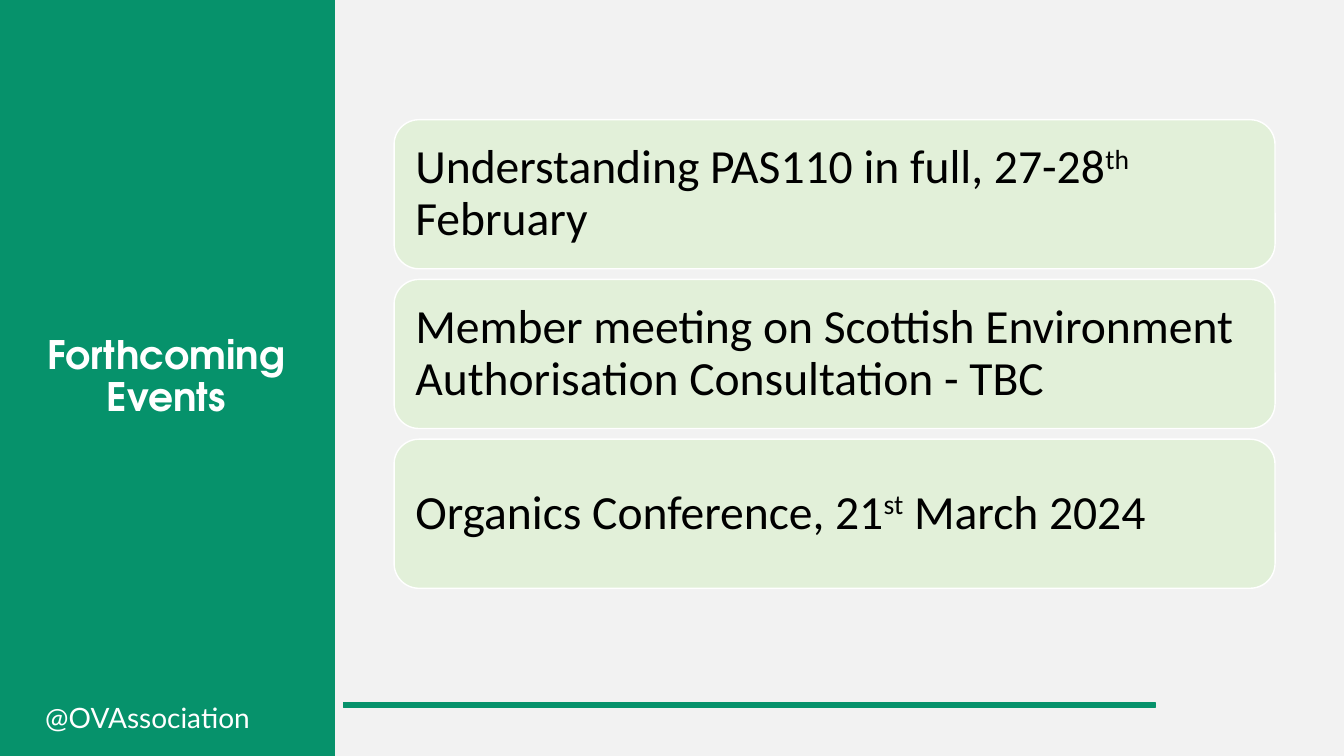
from dataclasses import dataclass

from pptx import Presentation
from pptx.dml.color import RGBColor
from pptx.enum.shapes import MSO_SHAPE
from pptx.enum.text import MSO_ANCHOR, PP_ALIGN
from pptx.util import Pt

RECTANGLE, ROUNDED = MSO_SHAPE.RECTANGLE, MSO_SHAPE.ROUNDED_RECTANGLE
MIDDLE = MSO_ANCHOR.MIDDLE
LEFT, CENTER = PP_ALIGN.LEFT, PP_ALIGN.CENTER


@dataclass(frozen=True)
class Theme:
    background: RGBColor = RGBColor(0xF2, 0xF2, 0xF2)
    green: RGBColor = RGBColor(0x06, 0x92, 0x6B)
    card: RGBColor = RGBColor(0xE2, 0xF0, 0xD9)
    white: RGBColor = RGBColor(0xFF, 0xFF, 0xFF)
    black: RGBColor = RGBColor(0, 0, 0)
    title_size: int = 28
    handle_size: int = 20
    event_size: int = 34


theme = Theme()


def add_panel(preset, left, top, width, height, fill, line):
    panel = page.shapes.add_shape(preset, Pt(left), Pt(top), Pt(width), Pt(height))
    panel.shadow.inherit = False
    panel.fill.solid()
    panel.fill.fore_color.rgb = fill
    panel.line.color.rgb = line
    panel.line.width = Pt(1)
    return panel


def style_span(span, font_name, size, color):
    span.font.name = font_name
    span.font.size = Pt(size)
    span.font.color.rgb = color


deck = Presentation()
deck.slide_width, deck.slide_height = Pt(960), Pt(540)
page = deck.slides.add_slide(deck.slide_layouts[6])
page.background.fill.solid()
page.background.fill.fore_color.rgb = theme.background

# Side panel and footer bar
add_panel(RECTANGLE, 0, 0, 238.5, 540, theme.green, theme.green)
add_panel(RECTANGLE, 245.5, 501.8, 579.6, 3.6, theme.green, theme.green)

# Title and account handle on the side panel
side_texts = [
    ("Forthcoming Events", (0, 216, 237.6, 108), "TeX Gyre Adventor", theme.title_size, True, CENTER, 0.9),
    ("@OVAssociation", (25.2, 496.8, 187.2, 31.7), "Lato", theme.handle_size, False, LEFT, 1.0),
]
for text, place, font_name, size, bold, alignment, spacing in side_texts:
    box = page.shapes.add_textbox(*[Pt(value) for value in place])
    box.text_frame.word_wrap = True
    box.text_frame.vertical_anchor = MIDDLE
    box.text_frame.text = text
    para = box.text_frame.paragraphs[0]
    para.alignment = alignment
    para.line_spacing = spacing
    style_span(para.runs[0], font_name, size, theme.white)
    para.runs[0].font.bold = bold

# Event cards: text before, raised ordinal, text after
events = [
    ("Understanding PAS110 in full, 27-28", "th", " February"),
    ("Member meeting on Scottish Environment Authorisation Consultation - TBC",),
    ("Organics Conference, 21", "st", " March 2024"),
]
card_top, card_pitch = 85.5, 114.1
for index, parts in enumerate(events):
    card = add_panel(ROUNDED, 281.5, card_top + index * card_pitch, 629.3, 106.5,
                     theme.card, theme.white)
    frame = card.text_frame
    frame.word_wrap = True
    frame.vertical_anchor = MIDDLE
    frame.margin_left = frame.margin_right = Pt(10)
    frame.margin_top = frame.margin_bottom = Pt(10)
    para = frame.paragraphs[0]
    para.alignment = LEFT
    para.line_spacing = 0.9
    for position, part in enumerate(parts):
        span = para.add_run()
        span.text = part
        style_span(span, "Calibri", theme.event_size, theme.black)
        if position == 1:
            span.font._element.set("baseline", "30000")

deck.save("out.pptx")
